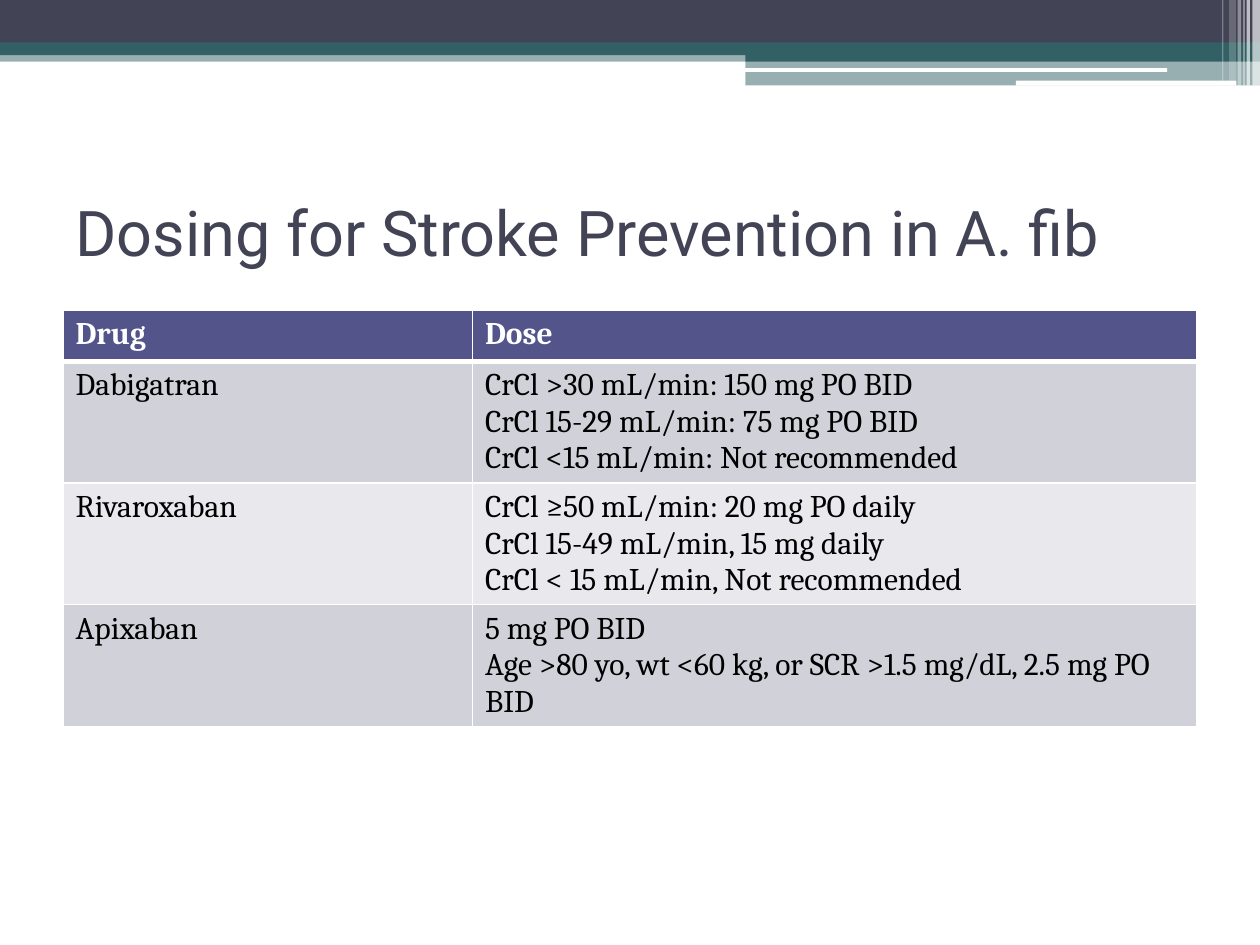
import pptx
import pptx.util
import pptx.dml.color
import pptx.enum.shapes
import pptx.enum.text
import pptx.oxml
import pptx.oxml.ns

Pt = pptx.util.Pt
RGB = pptx.dml.color.RGBColor
KIND = pptx.enum.shapes.MSO_SHAPE
ALIGN = pptx.enum.text.PP_ALIGN
ANCHOR = pptx.enum.text.MSO_ANCHOR

NAVY = RGB(0x42, 0x44, 0x56)
TEAL = RGB(0x32, 0x60, 0x64)
WHITE = RGB(0xFF, 0xFF, 0xFF)
BLACK = RGB(0, 0, 0)
HEAD = RGB(0x53, 0x54, 0x8A)
BANDS = (RGB(0xD1, 0xD1, 0xDA), RGB(0xE9, 0xE9, 0xED))

# Content
TITLE = "Dosing for Stroke Prevention in A. fib"
ROWS = [
    ("Drug", ["Dose"]),
    ("Dabigatran", ["CrCl >30 mL/min: 150 mg PO BID",
                    "CrCl 15-29 mL/min: 75 mg PO BID",
                    "CrCl <15 mL/min: Not recommended"]),
    ("Rivaroxaban", ["CrCl ≥50 mL/min: 20 mg PO daily",
                     "CrCl 15-49 mL/min, 15 mg daily",
                     "CrCl < 15 mL/min, Not recommended"]),
    ("Apixaban", ["5 mg PO BID",
                  "Age >80 yo, wt <60 kg, or SCR >1.5 mg/dL, 2.5 mg PO BID"]),
]

# Header bars: left, top, width, height, colour, opacity in percent
BARS = [
    (0, 28.8, 720, 6.5, TEAL, 50),
    (0, 0, 720, 24.5, NAVY, 100),
    (0, 24.3, 720, 7.2, TEAL, 100),
    (426, 28.2, 294, 7, TEAL, 100),
    (426, 35.2, 294, 13.6, TEAL, 50),
]
# White rules: left, top, width, height
RULES = [(425.8, 38.9, 241.2, 2.2), (580.5, 46.1, 126, 2.9)]
# White stripes at the right edge: left, width, height, opacity
STRIPES = [
    (715.6, 4.4, 49, 65), (712.3, 2, 49, 65), (710.5, 0.7, 49, 60),
    (707.2, 2, 49, 40), (702.3, 4, 46.1, 20), (698.4, 0.7, 46.1, 30),
]
COLS = (234, 414)
HEIGHTS = (29.2, 69.6, 69.6, 69.6)


def add_bar(slide, kind, box, color, alpha=100):
    bar = slide.shapes.add_shape(kind, *(Pt(n) for n in box))
    bar.shadow.inherit = False
    bar.line.fill.background()
    bar.fill.solid()
    bar.fill.fore_color.rgb = color
    if alpha < 100:
        tone = bar.fill._xPr.find(".//" + pptx.oxml.ns.qn("a:srgbClr"))
        tone.append(pptx.oxml.parse_xml(
            f'<a:alpha {pptx.oxml.ns.nsdecls("a")} val="{alpha * 1000}"/>'))


def style(frame, font, size, color, bold=False):
    for para in frame.paragraphs:
        para.alignment = ALIGN.LEFT
        for run in para.runs:
            run.font.name = font
            run.font.size = Pt(size)
            run.font.bold = bold
            run.font.color.rgb = color


def add_edges(cell, top, base):
    props = cell._tc.get_or_add_tcPr()
    for pos, (side, wide) in enumerate(zip("LRTB", (1, 1, top, base))):
        props.insert(pos, pptx.oxml.parse_xml(
            f'<a:ln{side} {pptx.oxml.ns.nsdecls("a")} w="{Pt(wide)}">'
            f'<a:solidFill><a:srgbClr val="{WHITE}"/></a:solidFill></a:ln{side}>'))


def add_grid(slide):
    shape = slide.shapes.add_table(len(ROWS), len(COLS), Pt(36), Pt(177.2),
                                   Pt(sum(COLS)), Pt(sum(HEIGHTS)))
    grid = shape.table
    for col, width in zip(grid.columns, COLS):
        col.width = Pt(width)
    for i, (drug, doses) in enumerate(ROWS):
        grid.rows[i].height = Pt(HEIGHTS[i])
        head = i == 0
        for j, text in enumerate((drug, "\n".join(doses))):
            cell = grid.cell(i, j)
            cell.text_frame.text = text
            style(cell.text_frame, "Cambria", 18, WHITE if head else BLACK, head)
            cell.fill.solid()
            cell.fill.fore_color.rgb = HEAD if head else BANDS[(i - 1) % 2]
            add_edges(cell, 3 if i == 1 else 1, 3 if head else 1)


def main():
    deck = pptx.Presentation()
    deck.slide_width, deck.slide_height = Pt(720), Pt(540)
    slide = deck.slides.add_slide(deck.slide_layouts[5])

    # Header decoration
    for *box, color, alpha in BARS:
        add_bar(slide, KIND.RECTANGLE, box, color, alpha)
    for box in RULES:
        add_bar(slide, KIND.ROUNDED_RECTANGLE, box, WHITE)
    for left, width, height, alpha in STRIPES:
        add_bar(slide, KIND.RECTANGLE, (left, 0, width, height), WHITE, alpha)

    # Title
    title = slide.shapes.title
    title.left, title.top, title.width, title.height = (
        Pt(n) for n in (36, 90, 648, 84.2))
    title.text_frame.text = TITLE
    title.text_frame.vertical_anchor = ANCHOR.MIDDLE
    style(title.text_frame, "Roboto", 36, NAVY)

    # Dosing table
    add_grid(slide)
    deck.save("out.pptx")


if __name__ == "__main__":
    main()
